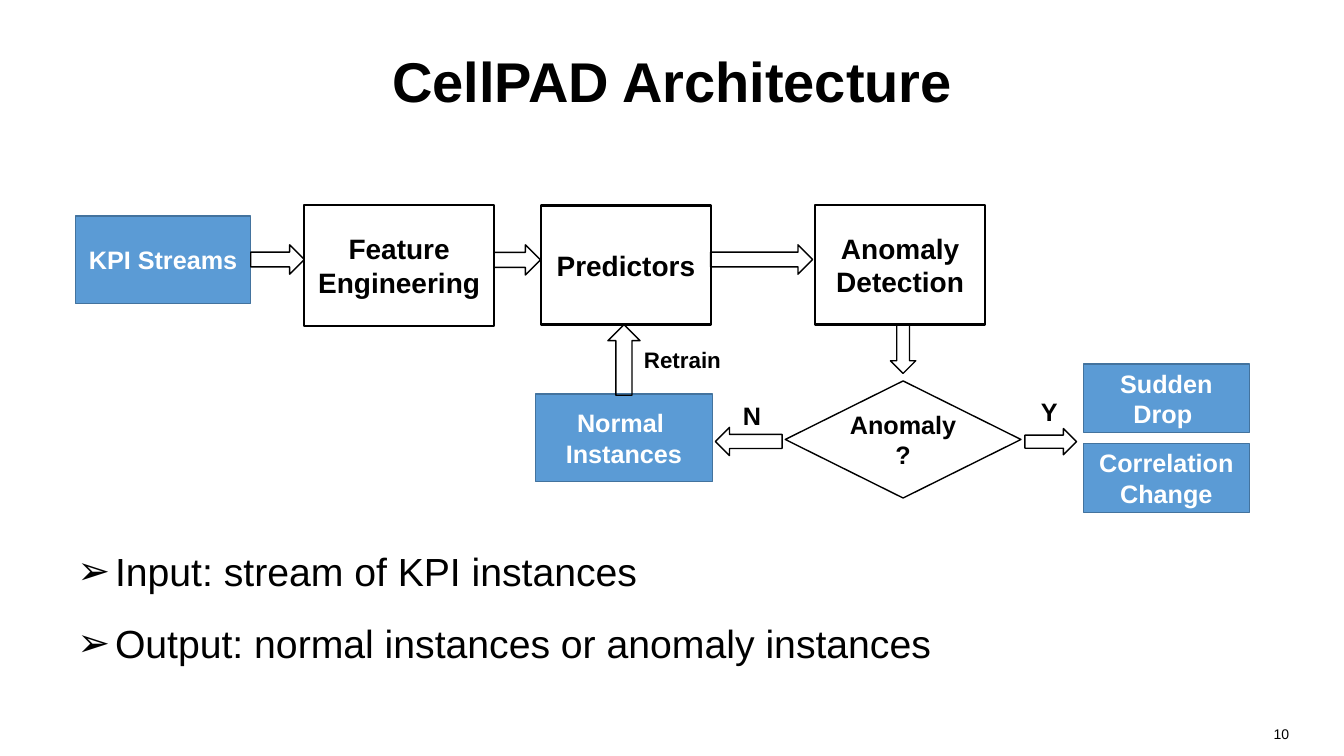
"""Build the CellPAD architecture slide with its flow chart and notes on input and output."""
from lxml.etree import SubElement
from pptx import Presentation
from pptx.dml.color import RGBColor
from pptx.enum.shapes import MSO_SHAPE
from pptx.enum.text import MSO_ANCHOR, PP_ALIGN
from pptx.oxml.ns import qn
from pptx.util import Cm, Pt

BLACK = RGBColor(0x00, 0x00, 0x00)
WHITE = RGBColor(0xFF, 0xFF, 0xFF)
BLUE = RGBColor(0x5B, 0x9B, 0xD5)
NAVY = RGBColor(0x43, 0x73, 0x9E)

deck = Presentation()
deck.slide_width, deck.slide_height = Cm(33.87), Cm(19.05)
slide = deck.slides.add_slide(deck.slide_layouts[6])
shapes = slide.shapes


def write(box, text, size=18, bold=True, color=BLACK, align=PP_ALIGN.CENTER,
          anchor=MSO_ANCHOR.MIDDLE, before=0):
    frame = box.text_frame
    frame.text = text
    frame.word_wrap = True
    frame.vertical_anchor = anchor
    for par in frame.paragraphs:
        par.alignment = align
        par.space_before = Pt(before)
        font = par.runs[0].font
        font.name, font.size, font.bold = "Arial", Pt(size), bold
        font.color.rgb = color
    return frame


def draw(kind, place, fill=None, line=BLACK, width=1):
    shape = shapes.add_shape(kind, *map(Cm, place))
    shape.shadow.inherit = False
    if fill is None:
        shape.fill.background()
    else:
        shape.fill.solid()
        shape.fill.fore_color.rgb = fill
    shape.line.color.rgb = line
    shape.line.width = Pt(width)
    return shape


title = shapes.add_textbox(Cm(1.7), Cm(0.43), Cm(30.48), Cm(3.18))
write(title, "CellPAD Architecture", size=40)

steps = [
    ("Feature Engineering", (7.67, 5.16, 4.78, 3.05)),
    ("Predictors", (13.64, 5.18, 4.27, 3)),
    ("Anomaly Detection", (20.55, 5.16, 4.27, 3.02)),
]
for text, place in steps:
    write(draw(MSO_SHAPE.RECTANGLE, place, fill=WHITE, width=1.5), text, size=20)

ends = [
    ("KPI Streams", (1.9, 5.44, 4.42, 2.21)),
    ("Normal \nInstances", (13.49, 9.93, 4.47, 2.21)),
    ("Sudden Drop ", (27.3, 9.17, 4.19, 1.73)),
    ("Correlation Change", (27.3, 11.18, 4.19, 1.73)),
]
for text, place in ends:
    write(draw(MSO_SHAPE.RECTANGLE, place, fill=BLUE, line=NAVY), text, color=WHITE)

choice = draw(MSO_SHAPE.FLOWCHART_DECISION, (19.79, 9.6, 5.94, 2.95), fill=WHITE)
frame = write(choice, "Anomaly?")
frame.margin_left = frame.margin_right = frame.margin_top = frame.margin_bottom = 0

arrows = [
    (MSO_SHAPE.RIGHT_ARROW, (6.32, 6.17, 1.35, 0.74)),
    (MSO_SHAPE.RIGHT_ARROW, (12.45, 6.17, 1.17, 0.76)),
    (MSO_SHAPE.RIGHT_ARROW, (17.91, 6.17, 2.57, 0.74)),
    (MSO_SHAPE.DOWN_ARROW, (22.44, 8.19, 0.64, 1.22)),
    (MSO_SHAPE.RIGHT_ARROW, (25.83, 10.8, 1.3, 0.66)),
    (MSO_SHAPE.LEFT_ARROW, (18.03, 10.77, 1.68, 0.71)),
    (MSO_SHAPE.UP_ARROW, (15.32, 8.18, 0.81, 1.78)),
]
for kind, place in arrows:
    draw(kind, place)

labels = [
    ("Y", 18, (25.98, 9.86, 0.97, 1.02)),
    ("N", 18, (18.47, 9.96, 1.5, 1.02)),
    ("Retrain", 16, (15.98, 8.59, 2.51, 0.94)),
]
for text, size, place in labels:
    label = shapes.add_textbox(*map(Cm, place))
    write(label, text, size=size, align=PP_ALIGN.LEFT, anchor=MSO_ANCHOR.TOP)

body = shapes.add_textbox(Cm(1.7), Cm(13.67), Cm(30.48), Cm(3.68))
points = "Input: stream of KPI instances\nOutput: normal instances or anomaly instances"
frame = write(body, points, size=28, bold=False, align=PP_ALIGN.LEFT,
              anchor=MSO_ANCHOR.TOP, before=18)
for par in frame.paragraphs:
    props = par._p.get_or_add_pPr()
    props.set("marL", str(Cm(0.95)))
    props.set("indent", str(-Cm(0.95)))
    SubElement(props, qn("a:buFont"), typeface="Arial")
    SubElement(props, qn("a:buChar"), char="➢")

number = shapes.add_textbox(Cm(24.84), Cm(18.16), Cm(7.9), Cm(0.89))
write(number, "10", size=10, bold=False, align=PP_ALIGN.RIGHT, anchor=MSO_ANCHOR.TOP)

deck.save("out.pptx")
